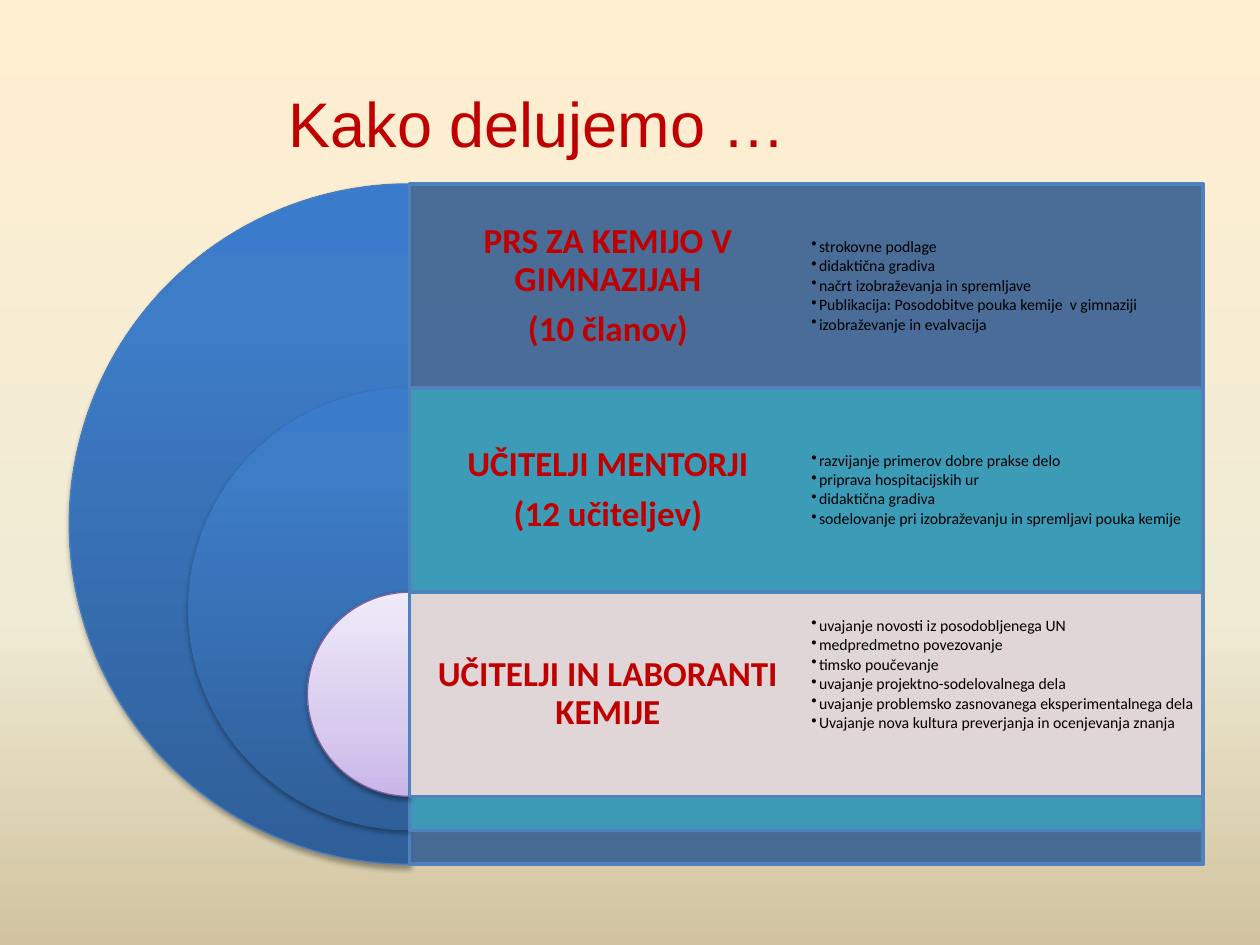
from dataclasses import dataclass
from typing import Optional

from lxml import etree
from pptx import Presentation
from pptx import util as u
from pptx.dml.color import RGBColor
from pptx.enum import shapes, text
from pptx.oxml.ns import qn

SLIDE_W, SLIDE_H = 10, 7.5
LEFT, TOP = 3.25, 1.46          # corner where the bars meet the half discs
COL, ROW = 3.15, 1.62           # one heading or list cell
LIP = 0.27                      # strip of each bar showing below the next

RED = RGBColor(0xC0, 0x00, 0x00)
BLACK = RGBColor(0x00, 0x00, 0x00)
BAR_EDGE = RGBColor(0x4F, 0x81, 0xBD)
NAVY = RGBColor(0x37, 0x60, 0x92)
TEAL = RGBColor(0x3B, 0xA0, 0xBB)
PINK = RGBColor(0xF2, 0xDC, 0xDB)
DISC_EDGE = RGBColor(0x4B, 0x7E, 0xBC)
LILAC_EDGE = RGBColor(0x7D, 0x60, 0xA0)

Stops = list[tuple[int, RGBColor]]
SAND: Stops = [(0, RGBColor(0xFF, 0xEF, 0xD1)), (65, RGBColor(0xF0, 0xEB, 0xD5)),
               (100, RGBColor(0xD1, 0xC3, 0x9F))]
BLUE: Stops = [(0, RGBColor(0x2F, 0x5F, 0x99)), (80, RGBColor(0x3D, 0x7C, 0xC7)),
               (100, RGBColor(0x3A, 0x7C, 0xCB))]
LILAC: Stops = [(0, RGBColor(0xC9, 0xB5, 0xE8)), (35, RGBColor(0xD8, 0xCB, 0xEE)),
                (100, RGBColor(0xF0, 0xEA, 0xF9))]


@dataclass
class Group:
    heading: list[str]
    tasks: list[str]
    bar: RGBColor
    disc: Stops
    disc_edge: Optional[RGBColor]
    shadow: tuple[float, int]       # distance in points, opacity in percent
    spare_lines: int = 0            # room kept free below the tasks


GROUPS = [
    Group(["PRS ZA KEMIJO V GIMNAZIJAH", "(10 članov)"],
          ["strokovne podlage", "didaktična gradiva",
           "načrt izobraževanja in spremljave",
           "Publikacija: Posodobitve pouka kemije  v gimnaziji",
           "izobraževanje in evalvacija"],
          NAVY, BLUE, DISC_EDGE, (1.8, 35)),
    Group(["UČITELJI MENTORJI", "(12 učiteljev)"],
          ["razvijanje primerov dobre prakse delo", "priprava hospitacijskih ur",
           "didaktična gradiva",
           "sodelovanje pri izobraževanju in spremljavi pouka kemije"],
          TEAL, BLUE, None, (1.8, 35)),
    Group(["UČITELJI IN LABORANTI KEMIJE"],
          ["uvajanje novosti iz posodobljenega UN", "medpredmetno povezovanje",
           "timsko poučevanje", "uvajanje projektno-sodelovalnega dela",
           "uvajanje problemsko zasnovanega eksperimentalnega dela",
           "Uvajanje nova kultura preverjanja in ocenjevanja znanja"],
          PINK, LILAC, LILAC_EDGE, (1.6, 38), spare_lines=2),
]


def add_color(parent, color: RGBColor, opacity: int = 100) -> None:
    clr = etree.SubElement(parent, qn("a:srgbClr"), val=str(color))
    if opacity < 100:
        etree.SubElement(clr, qn("a:alpha"), val=str(opacity * 1000))


def set_gradient(fill, owner, stops: Stops, angle: int) -> None:
    """Give fill, whose XML lies under owner, any number of stops."""
    fill.gradient()
    fill.gradient_angle = angle
    stop_list = next(owner.iter(qn("a:gsLst")))
    for old in list(stop_list):
        stop_list.remove(old)
    for share, color in stops:
        add_color(etree.SubElement(stop_list, qn("a:gs"), pos=str(share * 1000)), color)


def add_shape(slide, kind, left: float, top: float, width: float, height: float):
    shape = slide.shapes.add_shape(kind, *map(u.Inches, (left, top, width, height)))
    shape.shadow.inherit = False
    return shape


def add_half_disc(slide, group: Group, top: float, size: float) -> None:
    disc = add_shape(slide, shapes.MSO_SHAPE.PIE, LEFT - size / 2, top, size, size)
    disc.adjustments[0], disc.adjustments[1] = 54, 162
    props = disc._element.spPr
    set_gradient(disc.fill, props, group.disc, 90)
    if group.disc_edge is None:
        disc.line.fill.background()
    else:
        disc.line.color.rgb = group.disc_edge
        disc.line.width = u.Pt(0.75)
    distance, opacity = group.shadow
    shadow = etree.SubElement(
        props.find(qn("a:effectLst")), qn("a:outerShdw"), blurRad=str(u.Pt(3.1)),
        dist=str(u.Pt(distance)), dir="5400000", rotWithShape="0")
    add_color(shadow, BLACK, opacity)


def add_bar(slide, color: RGBColor, top: float, height: float) -> None:
    bar = add_shape(slide, shapes.MSO_SHAPE.RECTANGLE, LEFT, top, 2 * COL, height)
    bar.fill.solid()
    bar.fill.fore_color.rgb = color
    clr = next(bar._element.spPr.iter(qn("a:srgbClr")))
    etree.SubElement(clr, qn("a:alpha"), val="90000")
    bar.line.color.rgb = BAR_EDGE
    bar.line.width = u.Pt(2)


def add_cell(slide, col: int, row: int, lines: list[str], size: float, color: RGBColor,
             inset: float, gap: float):
    """Write lines in one grid cell, centred vertically."""
    box = slide.shapes.add_textbox(*map(u.Inches, (
        LEFT + col * COL, TOP + row * ROW, COL, ROW)))
    frame = box.text_frame
    frame.word_wrap = True
    frame.vertical_anchor = text.MSO_ANCHOR.MIDDLE
    frame.margin_left = frame.margin_right = u.Inches(inset)
    frame.margin_top = frame.margin_bottom = u.Inches(inset)
    frame.text = "\n".join(lines)
    for paragraph in frame.paragraphs:
        paragraph.line_spacing = 0.9
        paragraph.space_after = u.Pt(size * gap)
        font = paragraph.runs[0].font
        font.name, font.size, font.color.rgb = "Calibri", u.Pt(size), color
    return frame


def add_heading(slide, row: int, group: Group) -> None:
    frame = add_cell(slide, 0, row, group.heading, 20, RED, 0.08, 0.35)
    for paragraph in frame.paragraphs:
        paragraph.alignment = text.PP_ALIGN.CENTER
        paragraph.runs[0].font.bold = True


def add_tasks(slide, row: int, group: Group) -> None:
    frame = add_cell(slide, 1, row, group.tasks, 9, BLACK, 0.04, 0.15)
    frame.margin_bottom += group.spare_lines * u.Pt(11.1)
    for paragraph in frame.paragraphs:
        paragraph.level = 1
        props = paragraph._p.get_or_add_pPr()
        props.set("marL", str(u.Inches(0.06)))
        props.set("indent", str(-u.Inches(0.06)))
        etree.SubElement(props, qn("a:buChar"), char="•")


def set_title(slide, wording: str) -> None:
    title = slide.shapes.title
    title.left, title.top = u.Inches(2.19), u.Inches(0.62)
    title.width, title.height = u.Inches(4.33), u.Inches(0.71)
    frame = title.text_frame
    frame.text = wording
    frame.word_wrap = False
    frame.vertical_anchor = text.MSO_ANCHOR.TOP
    paragraph = frame.paragraphs[0]
    paragraph.alignment = text.PP_ALIGN.LEFT
    font = paragraph.runs[0].font
    font.name, font.size, font.color.rgb = "Arial", u.Pt(36), RED


def main() -> None:
    deck = Presentation()
    deck.slide_width, deck.slide_height = u.Inches(SLIDE_W), u.Inches(SLIDE_H)
    slide = deck.slides.add_slide(deck.slide_layouts[5])
    set_gradient(slide.background.fill, slide._element, SAND, 270)
    set_title(slide, "Kako delujemo …")

    for row, group in enumerate(GROUPS):
        top = TOP + row * ROW
        size = (len(GROUPS) - row) * ROW + (len(GROUPS) - 1 - row) * LIP
        add_half_disc(slide, group, top, size)
        add_bar(slide, group.bar, top, size)
        add_heading(slide, row, group)
        add_tasks(slide, row, group)
    deck.save("out.pptx")


if __name__ == "__main__":
    main()
